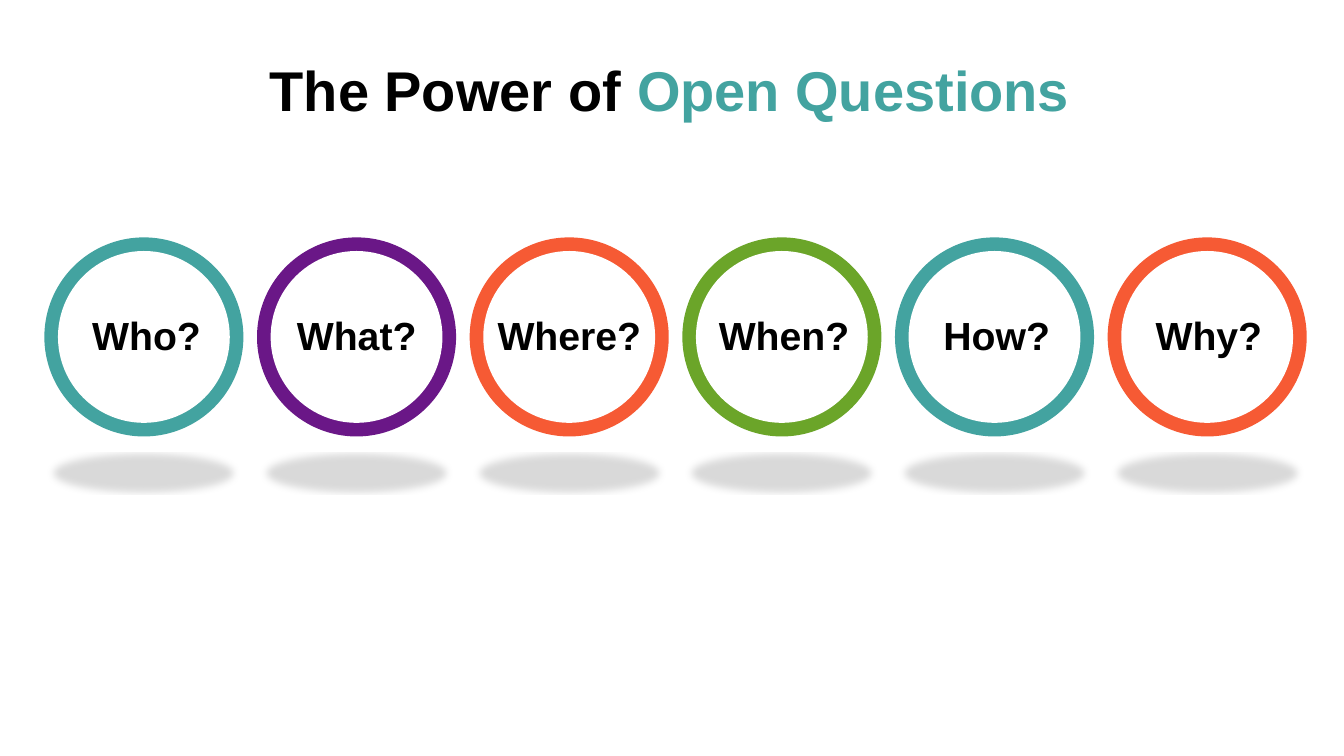
from lxml.etree import SubElement
from pptx import Presentation
from pptx.dml.color import RGBColor
from pptx.enum.shapes import MSO_SHAPE
from pptx.enum.text import MSO_ANCHOR, MSO_AUTO_SIZE, PP_ALIGN
from pptx.oxml.ns import qn
from pptx.util import Inches, Pt

BLACK, WHITE, TEAL = "000000", "FFFFFF", "43A3A0"
PURPLE, ORANGE, GREEN = "6A1787", "F65A34", "6BA529"

# Word, ring colour, left offset of the label within its ring
QUESTIONS = [
    ("Who?", TEAL, 0.36),
    ("What?", PURPLE, 0.31),
    ("Where?", ORANGE, 0.31),
    ("When?", GREEN, 0.35),
    ("How?", TEAL, 0.35),
    ("Why?", ORANGE, 0.34),
]
RING_LEFT, RING_TOP, RING_SIZE, RING_PITCH = 0.88, 4.71, 3.95, 4.22
RING_WIDTH = 0.27
LABEL_TOP, LABEL_WIDTH, LABEL_HEIGHT = 6.12, 3.34, 1.04


def color(hex_string):
    return RGBColor.from_string(hex_string)


class QuestionSlide:
    font_name = "Arial"
    title_size = 80
    label_size = 56

    def __init__(self, page):
        self.page = page

    def format_span(self, span, size, hex_string):
        span.font.name = self.font_name
        span.font.size = Pt(size)
        span.font.bold = True
        span.font.color.rgb = color(hex_string)

    def title(self, parts, left, top, width, height):
        box = self.page.shapes.title
        box.left, box.top = Inches(left), Inches(top)
        box.width, box.height = Inches(width), Inches(height)
        frame = box.text_frame
        frame.margin_left = frame.margin_right = 0
        frame.margin_top = frame.margin_bottom = 0
        frame.vertical_anchor = MSO_ANCHOR.TOP
        frame.auto_size = MSO_AUTO_SIZE.NONE
        para = frame.paragraphs[0]
        para.alignment = PP_ALIGN.CENTER
        for text, hex_string in parts:
            span = para.add_run()
            span.text = text
            self.format_span(span, self.title_size, hex_string)

    def disc(self, group, left, top, size, hex_string):
        shape = group.shapes.add_shape(
            MSO_SHAPE.OVAL, Inches(left), Inches(top), Inches(size), Inches(size))
        shape.shadow.inherit = False
        shape.fill.solid()
        shape.fill.fore_color.rgb = color(hex_string)
        shape.line.fill.background()
        return shape

    def floor_shadow(self, shape):
        """Cast a flattened soft shadow below the shape."""
        effects = shape.element.spPr.find(qn("a:effectLst"))
        shadow = SubElement(
            effects, qn("a:outerShdw"), blurRad=str(Pt(12)), dist=str(Pt(25)),
            dir="5400000", sx="90000", sy="-19000", rotWithShape="0")
        tint = SubElement(shadow, qn("a:srgbClr"), val=BLACK)
        SubElement(tint, qn("a:alpha"), val="15000")

    def label(self, group, text, left):
        box = group.shapes.add_textbox(
            Inches(left), Inches(LABEL_TOP), Inches(LABEL_WIDTH), Inches(LABEL_HEIGHT))
        frame = box.text_frame
        frame.word_wrap = True
        frame.auto_size = MSO_AUTO_SIZE.SHAPE_TO_FIT_TEXT
        frame.text = text
        para = frame.paragraphs[0]
        para.alignment = PP_ALIGN.CENTER
        self.format_span(para.runs[0], self.label_size, BLACK)

    def question(self, text, hex_string, left, label_offset):
        group = self.page.shapes.add_group_shape()
        ring = self.disc(group, left, RING_TOP, RING_SIZE, hex_string)
        self.floor_shadow(ring)
        self.disc(group, left + RING_WIDTH, RING_TOP + RING_WIDTH,
                  RING_SIZE - 2 * RING_WIDTH, WHITE)
        self.label(group, text, left + label_offset)


def main():
    deck = Presentation()
    deck.slide_width, deck.slide_height = Inches(26.67), Inches(15)
    page = deck.slides.add_slide(deck.slide_layouts[5])
    slide = QuestionSlide(page)
    slide.title([("The Power of ", BLACK), ("Open Questions", TEAL)],
                1.06, 1.11, 24.46, 1.91)
    for index, (text, hex_string, label_offset) in enumerate(QUESTIONS):
        slide.question(text, hex_string, RING_LEFT + index * RING_PITCH, label_offset)
    deck.save("out.pptx")


if __name__ == "__main__":
    main()
